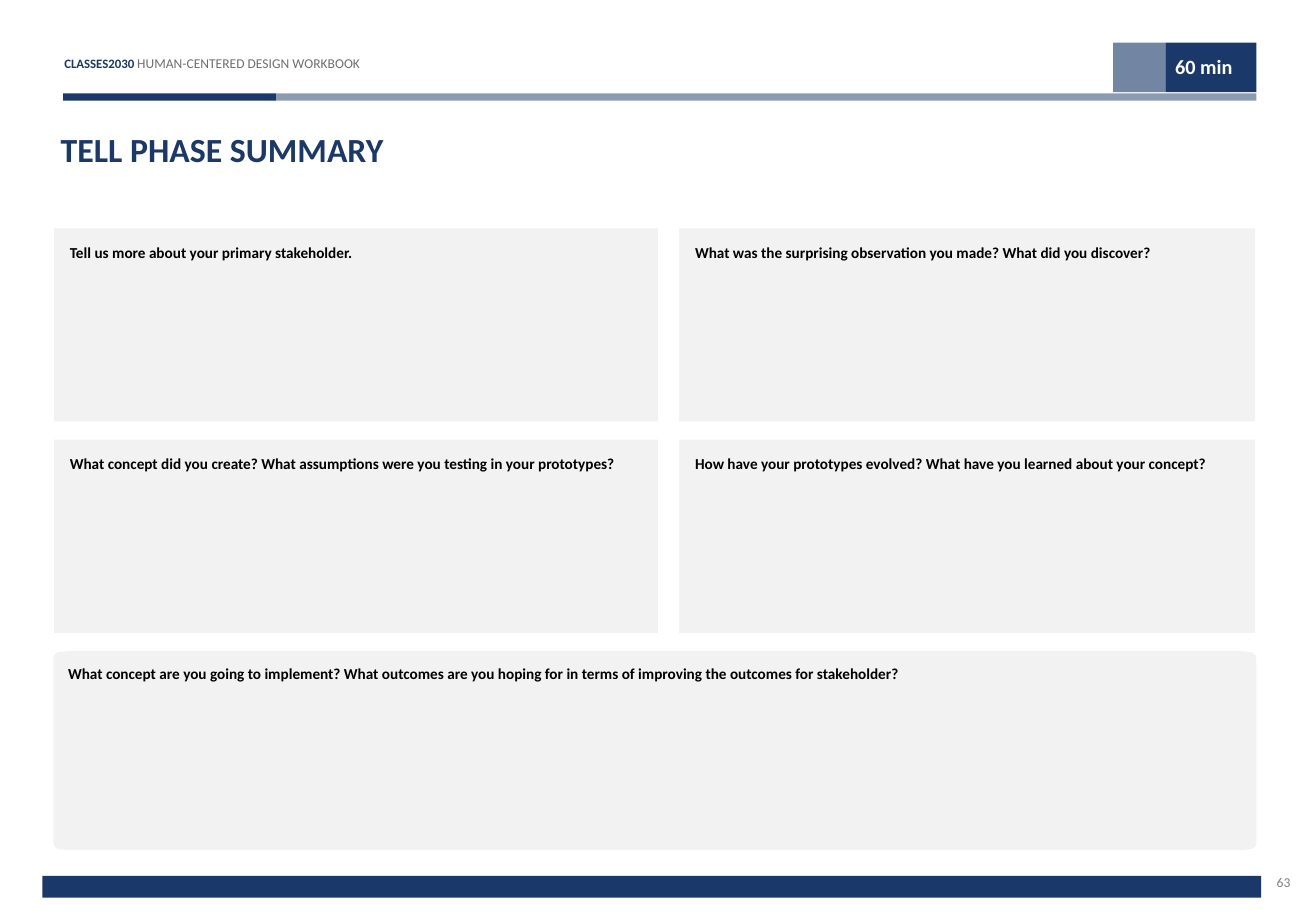
from dataclasses import dataclass

from lxml.etree import SubElement
from pptx import Presentation
from pptx.dml.color import RGBColor
from pptx.enum.shapes import MSO_SHAPE
from pptx.enum.text import MSO_ANCHOR, PP_ALIGN
from pptx.oxml.ns import qn
from pptx.util import Inches, Pt


@dataclass(frozen=True)
class Theme:
    font: str = "Calibri"
    navy: str = "1A396A"
    panel: str = "F2F2F2"
    black: str = "000000"
    white: str = "FFFFFF"
    header_gray: str = "6D6E71"
    number_gray: str = "808080"
    title_size: float = 20
    badge_size: float = 12
    question_size: float = 9
    small_size: float = 8
    brand_size: float = 7.6


THEME = Theme()

PANEL_LEFTS = (0.445, 5.59)
PANEL_WIDTHS = (4.97, 4.74)
PANEL_TOP, PANEL_PITCH, PANEL_HEIGHT = 1.88, 1.74, 1.59
QUESTIONS = (
    ("Tell us more about your primary stakeholder.",
     "What was the surprising observation you made? What did you discover?"),
    ("What concept did you create? What assumptions were you testing in your prototypes?",
     "How have your prototypes evolved? What have you learned about your concept?"),
)
FINAL_QUESTION = (
    "What concept are you going to implement? What outcomes are you hoping for "
    "in terms of improving the outcomes for stakeholder?"
)
CORNER = ((0, 0.06), (0.01, 0.03), (0.04, 0.01), (0.13, 0), (0.31, 0))


def style_font(font, size, color, bold=False):
    font.name = THEME.font
    font.size = Pt(size)
    font.bold = bold
    font.color.rgb = RGBColor.from_string(color)


def paint(shape, color, opacity=None):
    """Give the shape a flat fill, with opacity in percent, and no line or shadow."""
    shape.shadow.inherit = False
    shape.line.fill.background()
    shape.fill.solid()
    shape.fill.fore_color.rgb = RGBColor.from_string(color)
    if opacity is not None:
        color_element = shape._element.spPr.find(qn("a:solidFill"))[0]
        SubElement(color_element, qn("a:alpha"), val=str(opacity * 1000))


def add_block(slide, left, top, width, height, color, opacity=None):
    shape = slide.shapes.add_shape(
        MSO_SHAPE.RECTANGLE, Inches(left), Inches(top), Inches(width), Inches(height))
    paint(shape, color, opacity)
    return shape


def set_margins(frame, left, top, right=0.0, bottom=0.0):
    frame.margin_left, frame.margin_top = Inches(left), Inches(top)
    frame.margin_right, frame.margin_bottom = Inches(right), Inches(bottom)


def write_text(shape, text, size, color, bold=False,
               alignment=PP_ALIGN.LEFT, anchor=MSO_ANCHOR.TOP):
    frame = shape.text_frame
    frame.word_wrap = True
    frame.vertical_anchor = anchor
    paragraph = frame.paragraphs[0]
    paragraph.text = text
    paragraph.alignment = alignment
    style_font(paragraph.font, size, color, bold)
    return paragraph


def write_question(shape, text, left_margin):
    set_margins(shape.text_frame, left_margin, 0.12, 0.12, 0.12)
    return write_text(shape, text, THEME.question_size, THEME.black, bold=True)


def add_text(slide, left, top, width, height):
    box = slide.shapes.add_textbox(
        Inches(left), Inches(top), Inches(width), Inches(height))
    set_margins(box.text_frame, 0, 0)
    box.text_frame.word_wrap = True
    return box


def add_soft_panel(slide, left, top, width, height):
    """Add a panel whose corners are wider than they are high."""
    right, bottom = left + width, top + height
    points = [(left + x, top + y) for x, y in CORNER]
    points += [(right - x, top + y) for x, y in reversed(CORNER)]
    points += [(right - x, bottom - y) for x, y in CORNER]
    points += [(left + x, bottom - y) for x, y in reversed(CORNER)]
    corners = [(Inches(x), Inches(y)) for x, y in points]
    builder = slide.shapes.build_freeform(*corners[0])
    builder.add_line_segments(corners[1:], close=True)
    shape = builder.convert_to_shape()
    paint(shape, THEME.panel)
    return shape


def add_header(slide):
    add_block(slide, 0.52, 0.77, 1.75, 0.06, THEME.navy)
    add_block(slide, 2.27, 0.77, 8.07, 0.06, THEME.navy, opacity=50)

    box = add_text(slide, 0.51, 0.42, 3.03, 0.15)
    set_margins(box.text_frame, 0.02, 0.03)
    paragraph = box.text_frame.paragraphs[0]
    for text, size, color, bold in (
        ("CLASSES2030 ", THEME.brand_size, THEME.navy, True),
        ("HUMAN-CENTERED DESIGN WORKBOOK", THEME.small_size, THEME.header_gray, False),
    ):
        run = paragraph.add_run()
        run.text = text
        style_font(run.font, size, color, bold)

    badge = add_block(slide, 9.59, 0.35, 0.75, 0.41, THEME.navy)
    set_margins(badge.text_frame, 0.08, 0.1)
    write_text(badge, "60 min", THEME.badge_size, THEME.white, bold=True)
    add_block(slide, 9.16, 0.35, 0.43, 0.41, THEME.navy, opacity=61)


def add_footer(slide):
    add_block(slide, 0.35, 7.21, 10.03, 0.18, THEME.navy)
    number = add_text(slide, 10.31, 7.14, 0.31, 0.25)
    write_text(number, "63", THEME.small_size, THEME.number_gray,
               alignment=PP_ALIGN.RIGHT, anchor=MSO_ANCHOR.MIDDLE)


def add_question_panels(slide):
    for row, questions in enumerate(QUESTIONS):
        top = PANEL_TOP + row * PANEL_PITCH
        for left, width, question in zip(PANEL_LEFTS, PANEL_WIDTHS, questions):
            panel = add_block(slide, left, top, width, PANEL_HEIGHT, THEME.panel)
            write_question(panel, question, 0.13)
    final_panel = add_soft_panel(slide, 0.44, 5.36, 9.9, 1.64)
    write_question(final_panel, FINAL_QUESTION, 0.12).line_spacing = 0.96


def main():
    presentation = Presentation()
    presentation.slide_width = Inches(10.83)
    presentation.slide_height = Inches(7.5)
    slide = presentation.slides.add_slide(presentation.slide_layouts[6])
    add_header(slide)
    title = add_text(slide, 0.5, 1.06, 4.36, 0.34)
    write_text(title, "TELL PHASE SUMMARY", THEME.title_size, THEME.navy, bold=True)
    add_question_panels(slide)
    add_footer(slide)
    presentation.save("out.pptx")


if __name__ == "__main__":
    main()
